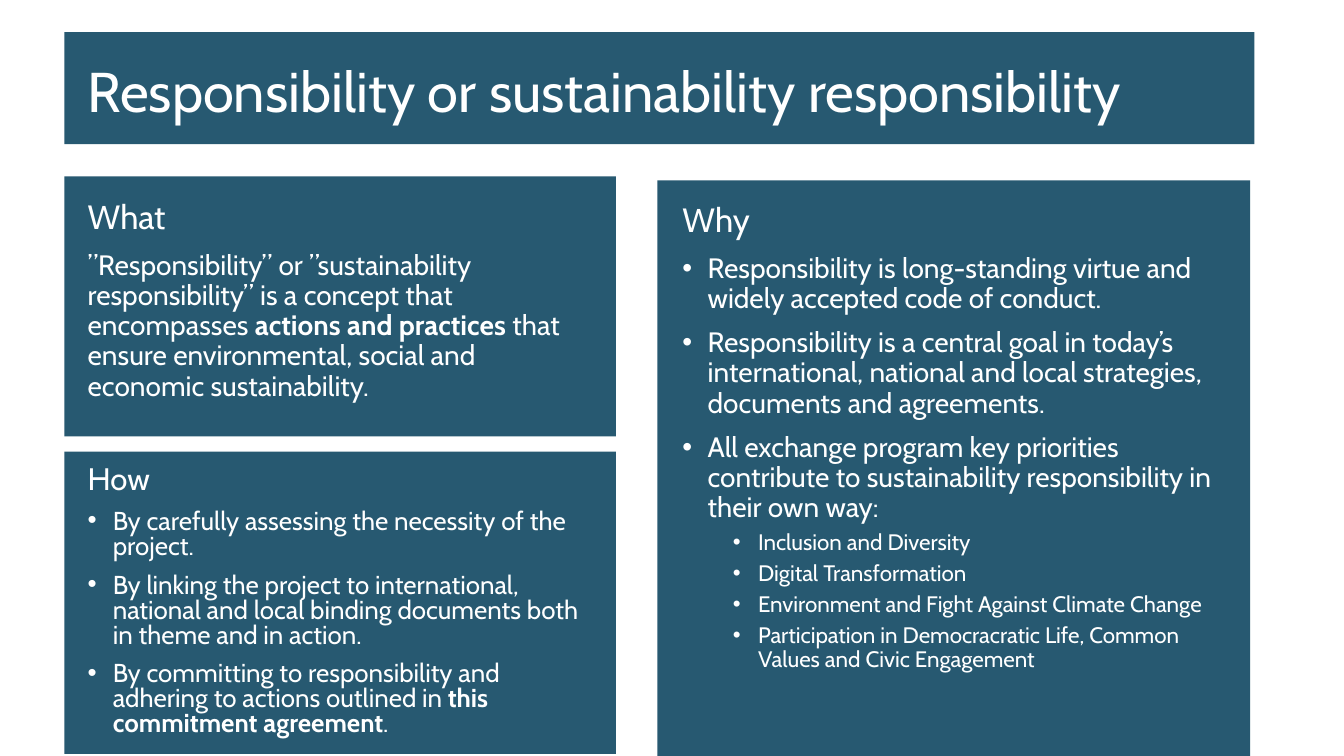
from dataclasses import dataclass

from lxml.etree import SubElement
from pptx import Presentation
from pptx.dml.color import RGBColor
from pptx.enum.shapes import MSO_SHAPE
from pptx.enum.text import MSO_ANCHOR, MSO_AUTO_SIZE, PP_ALIGN
from pptx.oxml.ns import qn
from pptx.util import Pt


@dataclass(frozen=True)
class Theme:
    """Colours, font and type sizes of the slide."""
    font: str = "Cabin"
    panel: RGBColor = RGBColor(0x10, 0x48, 0x62)
    text: RGBColor = RGBColor(0xFF, 0xFF, 0xFF)
    opacity: int = 90
    title: float = 40
    heading: float = 24
    body: float = 20
    detail: float = 16
    compact_heading: float = 22.2
    compact_body: float = 18.5


THEME = Theme()
INDENT = 18


def add_panel(slide, box):
    """Draw a translucent panel in the box."""
    panel = slide.shapes.add_shape(MSO_SHAPE.RECTANGLE, *map(Pt, box))
    panel.shadow.inherit = False
    panel.line.fill.background()
    panel.fill.solid()
    panel.fill.fore_color.rgb = THEME.panel
    color = panel.element.spPr.find(qn("a:solidFill"))[0]
    SubElement(color, qn("a:alpha")).set("val", str(THEME.opacity * 1000))


def place_text(slide, placeholder, box, anchor=MSO_ANCHOR.TOP):
    """Move a placeholder into the box, in front of the panels, and return its frame."""
    slide.shapes.element.append(placeholder.element)
    placeholder.left, placeholder.top, placeholder.width, placeholder.height = map(Pt, box)
    frame = placeholder.text_frame
    frame.word_wrap = True
    frame.auto_size = MSO_AUTO_SIZE.NONE
    frame.vertical_anchor = anchor
    return frame


def write(frame, text, size, bullet=False, level=0, spacing=0.9, before=10):
    """Add a paragraph in which double asterisks enclose bold words."""
    first = not frame.paragraphs[0].runs
    paragraph = frame.paragraphs[0] if first else frame.add_paragraph()
    paragraph.level = level
    properties = paragraph._p.get_or_add_pPr()
    properties.set("marL", str(Pt(INDENT * (1 + 2 * level) if bullet else 0)))
    properties.set("indent", str(Pt(-INDENT if bullet else 0)))
    if bullet:
        SubElement(properties, qn("a:buFont")).set("typeface", "Arial")
        SubElement(properties, qn("a:buChar")).set("char", "•")
    else:
        SubElement(properties, qn("a:buNone"))
    paragraph.alignment = PP_ALIGN.LEFT
    paragraph.line_spacing = spacing
    paragraph.space_before = Pt(0 if first else before)
    paragraph.space_after = Pt(0)
    for index, part in enumerate(text.split("**")):
        if part:
            run = paragraph.add_run()
            run.text = part
            run.font.name = THEME.font
            run.font.size = Pt(size)
            run.font.bold = index % 2 == 1
            run.font.color.rgb = THEME.text


def add_title(slide, box):
    """Place the title band in the box."""
    left, top, width, height = box
    add_panel(slide, box)
    frame = place_text(slide, slide.shapes.title,
                       (left + 9.4, top + 3, width - 22, height + 3.5), MSO_ANCHOR.MIDDLE)
    write(frame, "Responsibility or sustainability responsibility", THEME.title)


def add_what(slide, box):
    """Place the definition in the box."""
    left, top, width, height = box
    add_panel(slide, box)
    frame = place_text(slide, slide.placeholders[1],
                       (left + 9.4, top + 13.7, width - 20, height + 24))
    write(frame, "What", THEME.heading)
    write(frame, "”Responsibility” or ”sustainability responsibility” is a concept that "
          "encompasses **actions and practices **that ensure environmental, social and "
          "economic sustainability.", THEME.body)


def add_why(slide, box):
    """Place the reasons and the programme priorities in the box."""
    left, top, width, height = box
    add_panel(slide, box)
    frame = place_text(slide, slide.placeholders[4],
                       (left + 10.8, top + 13, width - 17.3, height - 26.5))
    write(frame, "Why", THEME.heading)
    for reason in (
        "Responsibility is long-standing virtue and widely accepted code of conduct.",
        "Responsibility is a central goal in today’s international, national and local "
        "strategies, documents and agreements.",
        "All exchange program key priorities contribute to sustainability responsibility "
        "in their own way:",
    ):
        write(frame, reason, THEME.body, bullet=True)
    for priority in (
        "Inclusion and Diversity",
        "Digital Transformation",
        "Environment and Fight Against Climate Change",
        "Participation in Democracratic Life, Common Values and Civic Engagement",
    ):
        write(frame, priority, THEME.detail, bullet=True, level=1, before=5)


def add_how(slide, box):
    """Place the ways of acting in the box."""
    left, top, width, height = box
    add_panel(slide, box)
    frame = place_text(slide, slide.placeholders[2],
                       (left + 9.4, top + 7.2, width - 20, height - 3))
    write(frame, "How", THEME.compact_heading, spacing=0.8)
    for way in (
        "By carefully assessing the necessity of the project.",
        "By linking the project to international, national and local binding documents "
        "both in theme and in action.",
        "By committing to responsibility and adhering to actions outlined in "
        "**this commitment agreement**.",
    ):
        write(frame, way, THEME.compact_body, bullet=True, spacing=0.8)


def main():
    """Build and save the presentation."""
    presentation = Presentation()
    presentation.slide_width, presentation.slide_height = Pt(960), Pt(540)
    slide = presentation.slides.add_slide(presentation.slide_layouts.get_by_name("Comparison"))
    unused = slide.placeholders[3].element
    unused.getparent().remove(unused)
    add_title(slide, (46, 23, 850, 80))
    add_what(slide, (46, 126, 394, 185.8))
    add_why(slide, (469.5, 128.9, 423.5, 411.1))
    add_how(slide, (46, 322.6, 394, 216))
    presentation.save("out.pptx")


if __name__ == "__main__":
    main()
